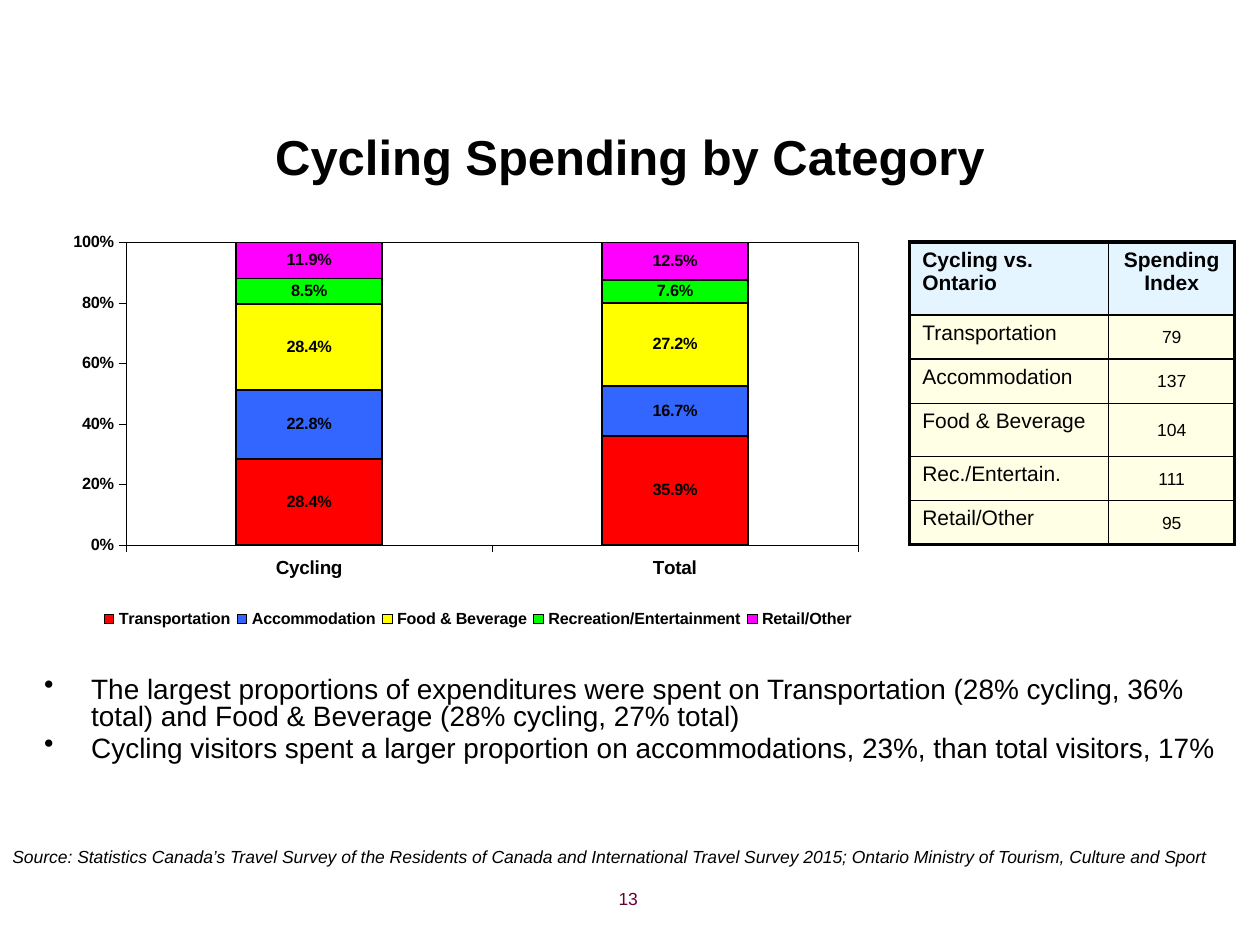
import pptx
import pptx.util
import pptx.chart.data
import pptx.dml.color
import pptx.enum.chart
import pptx.enum.text
import pptx.oxml
import pptx.oxml.ns

Cm, Pt = pptx.util.Cm, pptx.util.Pt
ALIGN, ANCHOR = pptx.enum.text.PP_ALIGN, pptx.enum.text.MSO_ANCHOR
NAMESPACES = pptx.oxml.ns.nsdecls("a", "c")

# Content
TITLE = "Cycling Spending by Category"
VISITORS = ["Cycling", "Total"]
SPENDING = [
    ("Transportation", (0.284, 0.359), "FF0000"),
    ("Accommodation", (0.228, 0.167), "3366FF"),
    ("Food & Beverage", (0.284, 0.272), "FFFF00"),
    ("Recreation/Entertainment", (0.085, 0.076), "00FF00"),
    ("Retail/Other", (0.119, 0.125), "FF00FF"),
]
INDEX_ROWS = [
    ("Cycling vs. Ontario", "Spending Index"),
    ("Transportation", "79"),
    ("Accommodation", "137"),
    ("Food & Beverage", "104"),
    ("Rec./Entertain.", "111"),
    ("Retail/Other", "95"),
]
FINDINGS = [
    "The largest proportions of expenditures were spent on Transportation "
    "(28% cycling, 36% total) and Food & Beverage (28% cycling, 27% total)",
    "Cycling visitors spent a larger proportion on accommodations, 23%, "
    "than total visitors, 17%",
]
SOURCE = ("Source: Statistics Canada’s Travel Survey of the Residents of Canada and "
          "International Travel Survey 2015; Ontario Ministry of Tourism, Culture and Sport")
PAGE_NUMBER = "13"

THEME = {
    "font": "Arial", "ink": "000000", "number": "660033",
    "header_fill": "CCECFF", "row_fill": "FFFFCC",
    "title": 28, "body": 16, "table": 12, "small": 10,
    "category": 10.8, "value": 9.3, "legend": 9.2,
    "outer_line": 2.25, "inner_line": 1, "axis_line": 0.25,
}
COLUMN_WIDTHS = [4.01, 2.54]
ROW_HEIGHTS = [1.47, 0.89, 0.89, 1.07, 0.89, 0.89]


def rgb(value):
    return pptx.dml.color.RGBColor.from_string(value)


def set_font(font, size, color=THEME["ink"], bold=False, italic=False):
    font.name, font.size = THEME["font"], Pt(size)
    font.bold, font.italic = bold, italic
    font.color.rgb = rgb(color)


def write(frame, texts, size, align=ALIGN.LEFT, anchor=ANCHOR.TOP, bullet=False,
          line_spacing=None, gap=0, **font_format):
    """Fill a text frame with one paragraph per text."""
    frame.word_wrap = True
    frame.vertical_anchor = anchor
    for number, text in enumerate(texts):
        para = frame.add_paragraph() if number else frame.paragraphs[0]
        para.alignment = align
        if line_spacing:
            para.line_spacing = line_spacing
        if number:
            para.space_before = Pt(gap)
        if bullet:
            properties = para._p.get_or_add_pPr()
            properties.set("marL", str(Cm(0.95)))
            properties.set("indent", str(-Cm(0.95)))
            properties.append(pptx.oxml.parse_xml(f'<a:buChar {NAMESPACES} char="•"/>'))
        span = para.add_run()
        span.text = text
        set_font(span.font, size, **font_format)


def add_text(page, place, texts, size, **text_format):
    box = page.shapes.add_textbox(*map(Cm, place))
    write(box.text_frame, texts, size, **text_format)


def manual_layout(x, y, width, height, inner=False):
    target = '<c:layoutTarget val="inner"/>' if inner else ""
    return pptx.oxml.parse_xml(
        f'<c:layout {NAMESPACES}><c:manualLayout>{target}'
        f'<c:xMode val="edge"/><c:yMode val="edge"/><c:x val="{x}"/><c:y val="{y}"/>'
        f'<c:w val="{width}"/><c:h val="{height}"/></c:manualLayout></c:layout>')


def style_axis(axis, size):
    set_font(axis.tick_labels.font, size, bold=True)
    axis.has_major_gridlines = False
    axis.major_tick_mark = pptx.enum.chart.XL_TICK_MARK.OUTSIDE
    axis.format.line.color.rgb = rgb(THEME["ink"])
    axis.format.line.width = Pt(THEME["axis_line"])


def add_spending_chart(page, place):
    data = pptx.chart.data.CategoryChartData(number_format="0.0%")
    data.categories = VISITORS
    for name, shares, _ in SPENDING:
        data.add_series(name, shares)
    kind = pptx.enum.chart.XL_CHART_TYPE.COLUMN_STACKED_100
    chart = page.shapes.add_chart(kind, *map(Cm, place), data).chart
    chart.has_title = False
    set_font(chart.font, THEME["value"], bold=True)

    plot = chart.plots[0]
    plot.gap_width, plot.overlap, plot.vary_by_categories = 150, 100, False
    for series, (_, _, color) in zip(plot.series, SPENDING):
        series.format.fill.solid()
        series.format.fill.fore_color.rgb = rgb(color)
        series.format.line.color.rgb = rgb(THEME["ink"])
        series.format.line.width = Pt(1)
        labels = series.data_labels
        labels.show_value = True
        labels.number_format, labels.number_format_is_linked = "0.0%", False
        set_font(labels.font, THEME["value"], bold=True)

    style_axis(chart.category_axis, THEME["category"])
    style_axis(chart.value_axis, THEME["value"])
    chart.value_axis.maximum_scale = 1
    chart.value_axis.major_unit = 0.2
    chart.value_axis.tick_labels.number_format = "0%"
    chart.value_axis.tick_labels.number_format_is_linked = False

    chart.has_legend = True
    chart.legend.position = pptx.enum.chart.XL_LEGEND_POSITION.BOTTOM
    chart.legend.include_in_layout = False
    set_font(chart.legend.font, THEME["legend"], bold=True)

    # Fixed places for the plot and legend, and a frame around the plot
    legend = chart.legend._element
    for old in legend.findall(pptx.oxml.ns.qn("c:layout")):
        legend.remove(old)
    legend.insert(1, manual_layout(0.07, 0.79, 0.92, 0.06))
    area = chart._chartSpace.chart.plotArea
    for old in area.findall(pptx.oxml.ns.qn("c:layout")):
        area.remove(old)
    area.insert(0, manual_layout(0.105, 0.033, 0.884, 0.632, inner=True))
    area.append(pptx.oxml.parse_xml(
        f'<c:spPr {NAMESPACES}><a:noFill/><a:ln w="{Pt(THEME["axis_line"])}"><a:solidFill>'
        f'<a:srgbClr val="{THEME["ink"]}"/></a:solidFill></a:ln></c:spPr>'))


def style_cell(cell, color, outer_sides):
    """Half-transparent fill, with heavier lines on the table's outer sides."""
    cell.fill.solid()
    cell.fill.fore_color.rgb = rgb(color)
    properties = cell._tc.get_or_add_tcPr()
    tint = properties.find(".//" + pptx.oxml.ns.qn("a:srgbClr"))
    tint.append(pptx.oxml.parse_xml(f'<a:alpha {NAMESPACES} val="50000"/>'))
    for position, side in enumerate("LRTB"):
        width = Pt(THEME["outer_line" if side in outer_sides else "inner_line"])
        properties.insert(position, pptx.oxml.parse_xml(
            f'<a:ln{side} {NAMESPACES} w="{width}"><a:solidFill>'
            f'<a:srgbClr val="{THEME["ink"]}"/></a:solidFill></a:ln{side}>'))


def add_index_table(page, left, top):
    last = len(INDEX_ROWS) - 1
    table = page.shapes.add_table(
        len(INDEX_ROWS), 2, Cm(left), Cm(top),
        Cm(sum(COLUMN_WIDTHS)), Cm(sum(ROW_HEIGHTS))).table
    for column, width in zip(table.columns, COLUMN_WIDTHS):
        column.width = Cm(width)
    for r, (row, height) in enumerate(zip(INDEX_ROWS, ROW_HEIGHTS)):
        table.rows[r].height = Cm(height)
        for c, text in enumerate(row):
            cell = table.cell(r, c)
            is_number = r > 0 and c == 1
            if is_number:
                cell.margin_left = cell.margin_right = cell.margin_top = Cm(0.03)
                cell.margin_bottom = 0
            write(cell.text_frame, [text], THEME["small" if is_number else "table"],
                  align=ALIGN.CENTER if c else ALIGN.LEFT, bold=r == 0)
            cell.vertical_anchor = ANCHOR.MIDDLE if is_number else ANCHOR.TOP
            sides = "LR"[c] + ("T" if r == 0 else "") + ("B" if r == last else "")
            style_cell(cell, THEME["row_fill" if r else "header_fill"], sides)


def main():
    deck = pptx.Presentation()
    deck.slide_width, deck.slide_height = Cm(25.4), Cm(19.05)
    page = deck.slides.add_slide(deck.slide_layouts[6])
    add_text(page, (1.27, 2.18, 22.86, 1.91), [TITLE], THEME["title"],
             align=ALIGN.CENTER, anchor=ANCHOR.MIDDLE, bold=True)
    add_text(page, (0.64, 13.54, 24.13, 3.61), FINDINGS, THEME["body"],
             bullet=True, line_spacing=0.8, gap=3.2)
    add_spending_chart(page, (0.79, 4.57, 16.69, 9.65))
    add_index_table(page, 18.34, 4.88)
    add_text(page, (0, 16.94, 24.89, 0.69), [SOURCE], THEME["small"], italic=True)
    add_text(page, (7.19, 17.78, 5.92, 0.89), [PAGE_NUMBER], THEME["small"],
             align=ALIGN.RIGHT, color=THEME["number"])
    deck.save("out.pptx")


if __name__ == "__main__":
    main()
